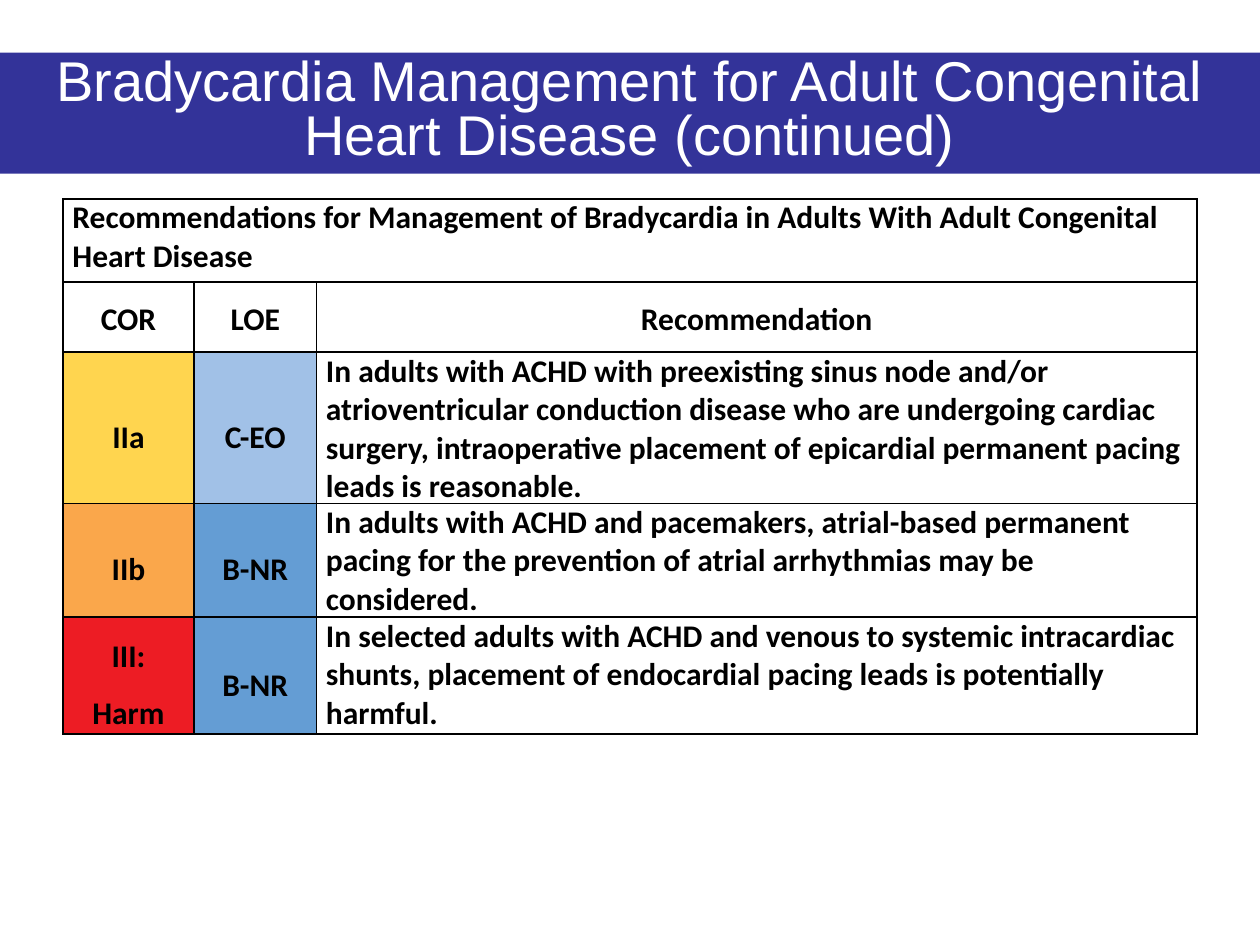
from pptx import Presentation
from pptx.dml.color import RGBColor
from pptx.enum.shapes import MSO_SHAPE
from pptx.enum.text import MSO_ANCHOR as ANCHOR, MSO_AUTO_SIZE as AUTO, PP_ALIGN as ALIGN
from pptx.oxml import parse_xml
from pptx.oxml.ns import nsdecls
from pptx.util import Cm, Pt


def rgb(value):
    return RGBColor.from_string(value)


class Deck:
    ink, white, band = "000000", "FFFFFF", "333399"
    title_font, body_font = "Arial", "Calibri"
    title_size, body_size = 32, 18

    def __init__(self, width, height):
        self.prs = Presentation()
        self.prs.slide_width, self.prs.slide_height = Cm(width), Cm(height)
        self.s = self.prs.slides.add_slide(self.prs.slide_layouts[6])

    def add_text(self, tf, text, font, size, color, bold=False, align=ALIGN.LEFT, spacing=1.0):
        p = tf.paragraphs[0]
        p.alignment, p.line_spacing = align, spacing
        r = p.add_run()
        r.text = text
        r.font.name, r.font.size, r.font.bold = font, Pt(size), bold
        r.font.color.rgb = rgb(color)

    def title(self, text, x, y, w, h):
        sp = self.s.shapes.add_shape(MSO_SHAPE.RECTANGLE, Cm(x), Cm(y), Cm(w), Cm(h))
        sp.shadow.inherit = False
        sp.fill.solid()
        sp.fill.fore_color.rgb = rgb(self.band)
        sp.line.fill.background()
        tf = sp.text_frame
        tf.word_wrap, tf.auto_size = True, AUTO.SHAPE_TO_FIT_TEXT
        tf.vertical_anchor = ANCHOR.TOP
        self.add_text(tf, text, self.title_font, self.title_size, self.white,
                      align=ALIGN.CENTER, spacing=0.8)

    def borders(self, cell):
        tc_pr = cell._tc.get_or_add_tcPr()
        for i, side in enumerate(("lnL", "lnR", "lnT", "lnB")):
            tc_pr.insert(i, parse_xml(
                f'<a:{side} {nsdecls("a")} w="{Pt(1)}"><a:solidFill>'
                f'<a:srgbClr val="{self.ink}"/></a:solidFill></a:{side}>'))

    def cell(self, cell, text, fill=None, spacing=None):
        cell.margin_left = cell.margin_right = Cm(0.19)
        cell.margin_top = cell.margin_bottom = 0
        if fill:
            cell.fill.solid()
            cell.fill.fore_color.rgb = rgb(fill)
        else:
            cell.fill.background()
        self.borders(cell)
        cell.vertical_anchor = ANCHOR.MIDDLE if spacing else ANCHOR.TOP
        if text:
            self.add_text(cell.text_frame, text, self.body_font, self.body_size, self.ink, True,
                          ALIGN.CENTER if spacing else ALIGN.LEFT, spacing or 1.0)

    def table(self, x, y, widths, heights, heading, headers, rows):
        tbl = self.s.shapes.add_table(len(heights), len(widths), Cm(x), Cm(y),
                                      Cm(sum(widths)), Cm(sum(heights))).table
        tbl.first_row = tbl.horz_banding = False
        for col, width in zip(tbl.columns, widths):
            col.width = Cm(width)
        for row, height in zip(tbl.rows, heights):
            row.height = Cm(height)
        tbl.cell(0, 0).merge(tbl.cell(0, len(widths) - 1))
        for c, header in enumerate(headers):
            self.cell(tbl.cell(0, c), "" if c else heading)
            self.cell(tbl.cell(1, c), header, spacing=1.15)
        for r, (cor, loe, advice) in enumerate(rows, 2):
            self.cell(tbl.cell(r, 0), cor, COR_COLORS[cor], 1.5)
            self.cell(tbl.cell(r, 1), loe, LOE_COLORS[loe], 1.5)
            self.cell(tbl.cell(r, 2), advice)


COR_COLORS = {"IIa": "FFD54F", "IIb": "FAA74B", "III: Harm": "ED1C24"}
LOE_COLORS = {"C-EO": "A1C1E7", "B-NR": "649DD4"}
RECOMMENDATIONS = [
    ("IIa", "C-EO",
     "In adults with ACHD with preexisting sinus node and/or atrioventricular conduction "
     "disease who are undergoing cardiac surgery, intraoperative placement of epicardial "
     "permanent pacing leads is reasonable."),
    ("IIb", "B-NR",
     "In adults with ACHD and pacemakers, atrial-based permanent pacing for the prevention "
     "of atrial arrhythmias may be considered."),
    ("III: Harm", "B-NR",
     "In selected adults with ACHD and venous to systemic intracardiac shunts, placement of "
     "endocardial pacing leads is potentially harmful."),
]


def main():
    deck = Deck(25.4, 19.05)
    deck.title("Bradycardia Management for Adult Congenital Heart Disease (continued)",
               0, 1.06, 25.4, 2.44)
    deck.table(1.27, 4.01, (2.64, 2.47, 17.75), (1.67, 1.42, 3.05, 2.29, 2.36),
               "Recommendations for Management of Bradycardia in Adults With Adult "
               "Congenital Heart Disease",
               ("COR", "LOE", "Recommendation"), RECOMMENDATIONS)
    deck.prs.save("out.pptx")


if __name__ == "__main__":
    main()
